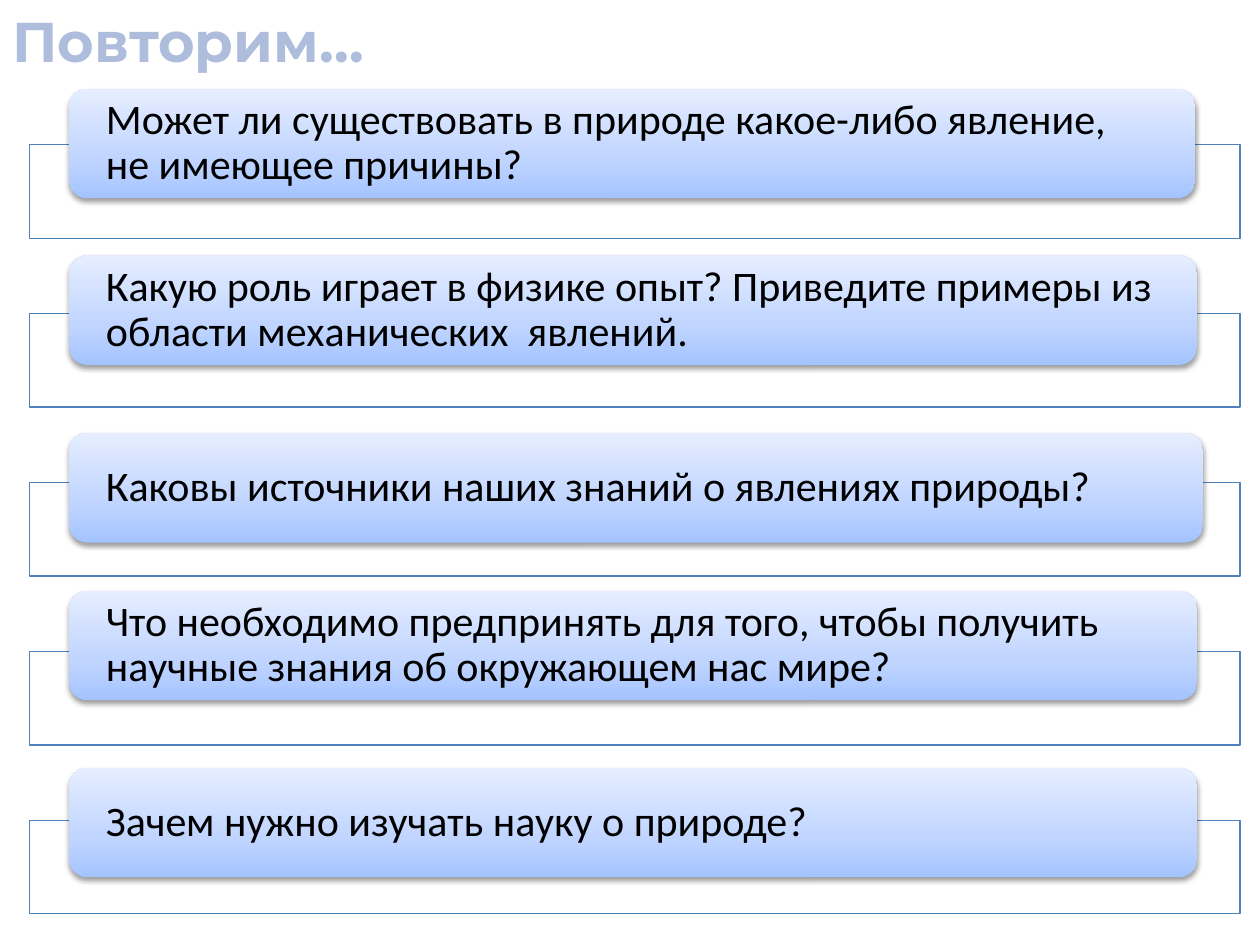
from lxml.etree import SubElement
from pptx import Presentation
from pptx.dml.color import RGBColor
from pptx.enum.shapes import MSO_SHAPE
from pptx.enum.text import MSO_ANCHOR, PP_ALIGN
from pptx.oxml.ns import qn
from pptx.util import Pt

WHITE = RGBColor(0xFF, 0xFF, 0xFF)
BLACK = RGBColor(0x00, 0x00, 0x00)
FRAME_BLUE = RGBColor(0x4F, 0x81, 0xBD)
TITLE_BLUE = RGBColor(0xAE, 0xBD, 0xDC)
PILL_STOPS = (
    (0, RGBColor(0xA4, 0xC4, 0xFF)),
    (35, RGBColor(0xBF, 0xD4, 0xFF)),
    (100, RGBColor(0xE6, 0xEE, 0xFF)),
)

FRAME_LEFT, FRAME_TOP, FRAME_WIDTH, FRAME_HEIGHT = 16.7, 82.8, 692, 53.4
FRAME_PITCH = 96.5
PILL_INDENT, PILL_HEIGHT = 22.8, 62.6

# Each question: wording, rise of the pill above its frame, pill width
QUESTIONS = (
    ("Может ли существовать в природе какое-либо явление, не имеющее причины?", 32, 643.5),
    ("Какую роль играет в физике опыт? Приведите примеры из области механических  явлений.", 33.3, 644.5),
    ("Каковы источники наших знаний о явлениях природы?", 28.3, 648),
    ("Что необходимо предпринять для того, чтобы получить научные знания об окружающем нас мире?", 34.7, 644.5),
    ("Зачем нужно изучать науку о природе?", 30, 644.5),
)


def add_color(parent, color, alpha=None):
    """Append an RGB colour, with an optional opacity in percent."""
    node = SubElement(parent, qn("a:srgbClr"), val=str(color))
    if alpha is not None:
        SubElement(node, qn("a:alpha"), val=str(alpha * 1000))


def fill_gradient(shape, stops):
    """Fill a shape with a gradient that runs from bottom to top."""
    shape.fill.gradient()
    shape.fill.gradient_angle = 90
    stop_list = shape._element.spPr.find(".//" + qn("a:gsLst"))
    for stop in list(stop_list):
        stop_list.remove(stop)
    for position, color in stops:
        add_color(SubElement(stop_list, qn("a:gs"), pos=str(position * 1000)), color)


def add_drop_shadow(shape):
    """Give a shape a soft shadow straight below it."""
    shape.shadow.inherit = False
    effects = shape._element.spPr.find(qn("a:effectLst"))
    shadow = SubElement(effects, qn("a:outerShdw"), blurRad=str(Pt(3.1)),
                        dist=str(Pt(1.6)), dir="5400000", rotWithShape="0")
    add_color(shadow, BLACK, 38)


def style_text(para, font_name, size, color, bold=False):
    """Set the font of every run in a paragraph."""
    for span in para.runs:
        span.font.name = font_name
        span.font.size = Pt(size)
        span.font.bold = bold
        span.font.color.rgb = color


def add_title(page, left, top, width, height):
    """Place the heading of the slide."""
    box = page.shapes.add_textbox(Pt(left), Pt(top), Pt(width), Pt(height))
    box.text_frame.word_wrap = True
    para = box.text_frame.paragraphs[0]
    para.text = "Повторим…"
    style_text(para, "Montserrat", 32, TITLE_BLUE, bold=True)


def add_frame(page, left, top, width, height):
    """Place the outlined rectangle behind a question."""
    frame = page.shapes.add_shape(MSO_SHAPE.RECTANGLE, Pt(left), Pt(top), Pt(width), Pt(height))
    frame.shadow.inherit = False
    frame.fill.solid()
    frame.fill.fore_color.rgb = WHITE
    frame.line.color.rgb = FRAME_BLUE
    frame.line.width = Pt(0.75)


def add_pill(page, question, left, top, width, height):
    """Place the rounded box that holds a question."""
    pill = page.shapes.add_shape(MSO_SHAPE.ROUNDED_RECTANGLE, Pt(left), Pt(top), Pt(width), Pt(height))
    fill_gradient(pill, PILL_STOPS)
    pill.line.fill.background()
    add_drop_shadow(pill)
    frame = pill.text_frame
    frame.word_wrap = True
    frame.vertical_anchor = MSO_ANCHOR.MIDDLE
    frame.margin_left = frame.margin_right = Pt(18)
    frame.margin_top = frame.margin_bottom = Pt(0)
    para = frame.paragraphs[0]
    para.text = question
    para.alignment = PP_ALIGN.LEFT
    para.line_spacing = 0.9
    style_text(para, "Calibri", 24, BLACK)


def add_questions(page, left, top, width):
    """Place the column of framed questions."""
    for index, (question, rise, pill_width) in enumerate(QUESTIONS):
        frame_top = top + index * FRAME_PITCH
        add_frame(page, left, frame_top, width, FRAME_HEIGHT)
        add_pill(page, question, left + PILL_INDENT, frame_top - rise, pill_width, PILL_HEIGHT)


def main():
    """Build the slide and save the deck."""
    deck = Presentation()
    deck.slide_width, deck.slide_height = Pt(720), Pt(540)
    page = deck.slides.add_slide(deck.slide_layouts[6])
    add_title(page, 0, 0, 720, 46)
    add_questions(page, FRAME_LEFT, FRAME_TOP, FRAME_WIDTH)
    deck.save("out.pptx")


if __name__ == "__main__":
    main()
